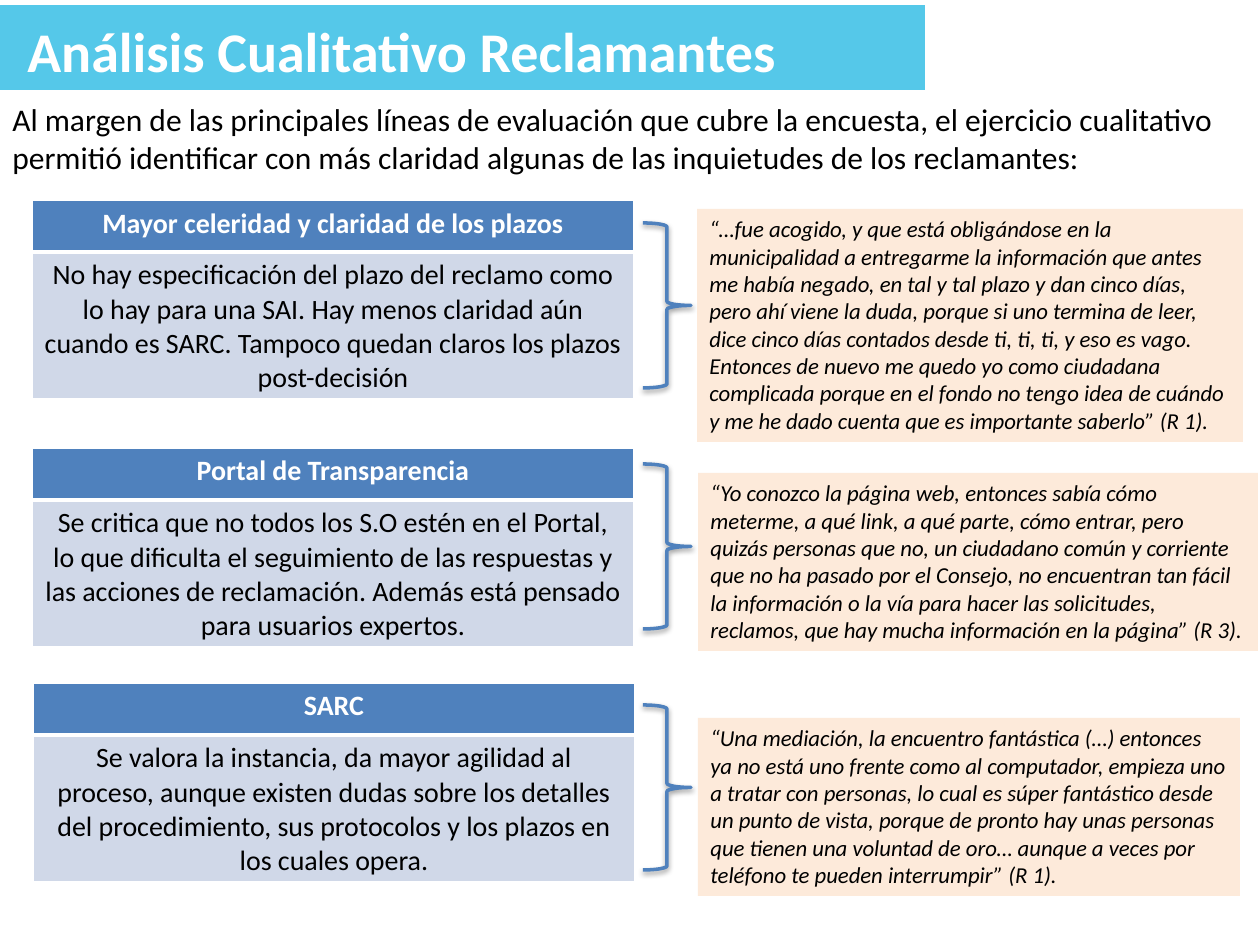
"""Build the slide on the qualitative analysis of claimants."""
from pptx import Presentation
from pptx.dml.color import RGBColor
from pptx.enum.shapes import MSO_SHAPE
from pptx.enum.text import MSO_ANCHOR, MSO_AUTO_SIZE, PP_ALIGN
from pptx.oxml import parse_xml
from pptx.oxml.ns import nsdecls
from pptx.util import Pt

RECT = MSO_SHAPE.RECTANGLE
BRACE = MSO_SHAPE.RIGHT_BRACE
TOP = MSO_ANCHOR.TOP
GROW = MSO_AUTO_SIZE.SHAPE_TO_FIT_TEXT
LEFT = PP_ALIGN.LEFT
CENTER = PP_ALIGN.CENTER

WHITE = RGBColor(0xFF, 0xFF, 0xFF)
BLACK = RGBColor(0x00, 0x00, 0x00)
CYAN = RGBColor(0x55, 0xC8, 0xE9)
BLUE = RGBColor(0x4F, 0x81, 0xBD)
PALE = RGBColor(0xD0, 0xD8, 0xE8)
PEACH = RGBColor(0xFD, 0xEA, 0xDA)

SCALE = 914400 / 126
FONT = "Calibri"
SHADOW = (
    f'<a:effectLst {nsdecls("a")}><a:outerShdw blurRad="40000" dist="20000" '
    'dir="5400000" rotWithShape="0"><a:srgbClr val="000000">'
    '<a:alpha val="38000"/></a:srgbClr></a:outerShdw></a:effectLst>'
)

TITLE = "Análisis Cualitativo Reclamantes"
INTRO = (
    "Al margen de las principales líneas de evaluación que cubre la encuesta, "
    "el ejercicio cualitativo permitió identificar con más claridad algunas de "
    "las inquietudes de los reclamantes:"
)
TOPICS = [
    (
        (32, 200), "Mayor celeridad y claridad de los plazos",
        "No hay especificación del plazo del reclamo como lo hay para una SAI. "
        "Hay menos claridad aún cuando es SARC. Tampoco quedan claros los plazos "
        "post-decisión",
        (697, 209, 546, 233),
        "“…fue acogido, y que está obligándose en la municipalidad a entregarme "
        "la información que antes me había negado, en tal y tal plazo y dan cinco "
        "días, pero ahí viene la duda, porque si uno termina de leer, dice cinco "
        "días contados desde ti, ti, ti, y eso es vago. Entonces de nuevo me quedo "
        "yo como ciudadana complicada porque en el fondo no tengo idea de cuándo y "
        "me he dado cuenta que es importante saberlo” (R 1).",
    ),
    (
        (32, 448), "Portal de Transparencia",
        "Se critica que no todos los S.O estén en el Portal, lo que dificulta el "
        "seguimiento de las respuestas y las acciones de reclamación. Además está "
        "pensado para usuarios expertos.",
        (698, 473, 560, 178),
        "“Yo conozco la página web, entonces sabía cómo meterme, a qué link, a qué "
        "parte, cómo entrar, pero quizás personas que no, un ciudadano común y "
        "corriente que no ha pasado por el Consejo, no encuentran tan fácil la "
        "información o la vía para hacer las solicitudes, reclamos, que hay mucha "
        "información en la página” (R 3).",
    ),
    (
        (33, 683), "SARC",
        "Se valora la instancia, da mayor agilidad al proceso, aunque existen "
        "dudas sobre los detalles del procedimiento, sus protocolos y los plazos "
        "en los cuales opera.",
        (698, 718, 542, 178),
        "“Una mediación, la encuentro fantástica (…) entonces ya no está uno "
        "frente como al computador, empieza uno a tratar con personas, lo cual es "
        "súper fantástico desde un punto de vista, porque de pronto hay unas "
        "personas que tienen una voluntad de oro… aunque a veces por teléfono te "
        "pueden interrumpir” (R 1).",
    ),
]


def emu(*nums):
    """Turn px lengths into EMU."""
    return [round(n * SCALE) for n in nums]


class Sheet:
    """Hold the style and the current slide."""

    def __init__(self, deck):
        self.slide = deck.slides.add_slide(deck.slide_layouts[6])
        self.shapes = self.slide.shapes

    def put(self, frame, text, size, color=BLACK, bold=False, slant=False,
            align=LEFT):
        """Fill a frame with one styled paragraph."""
        para = frame.paragraphs[0]
        para.text = text
        para.alignment = align
        font = para.font
        font.name, font.size = FONT, Pt(size)
        font.bold, font.italic = bold, slant
        font.color.rgb = color

    def label(self, box, text, size, wrap=True, **style):
        """Add a text box."""
        frame = self.shapes.add_textbox(*emu(*box)).text_frame
        frame.word_wrap = wrap
        frame.auto_size = GROW
        self.put(frame, text, size, **style)

    def block(self, box, fill):
        """Add a plain filled rectangle."""
        shape = self.shapes.add_shape(RECT, *emu(*box))
        shape.shadow.inherit = False
        shape.fill.solid()
        shape.fill.fore_color.rgb = fill
        shape.line.fill.background()
        return shape

    def quote(self, box, text):
        """Add a filled box with a quotation."""
        frame = self.block(box, PEACH).text_frame
        frame.word_wrap = True
        frame.auto_size = GROW
        frame.vertical_anchor = TOP
        self.put(frame, text, 13, slant=True)

    def brace(self, box):
        """Add a right brace with a soft shadow."""
        shape = self.shapes.add_shape(BRACE, *emu(*box))
        shape.fill.background()
        shape.line.color.rgb = BLUE
        shape.line.width = Pt(2)
        shape._element.spPr.append(parse_xml(SHADOW))

    def edge(self, cell, low):
        """Draw white borders round a cell, the lower one low points wide."""
        props = cell._tc.get_or_add_tcPr()
        for spot, (side, width) in enumerate(zip("LRTB", (1, 1, 1, low))):
            props.insert(spot, parse_xml(
                f'<a:ln{side} {nsdecls("a")} w="{Pt(width)}"><a:solidFill>'
                f'<a:srgbClr val="{WHITE}"/></a:solidFill></a:ln{side}>'))

    def table(self, spot, head, body):
        """Add a two-row table with a heading and a body."""
        grid = self.shapes.add_table(2, 1, *emu(*spot, 602, 198)).table
        rows = [(head, 52, BLUE, WHITE, True, 3), (body, 146, PALE, BLACK, False, 1)]
        for num, (text, high, fill, color, bold, low) in enumerate(rows):
            grid.rows[num].height = emu(high)[0]
            cell = grid.cell(num, 0)
            cell.fill.solid()
            cell.fill.fore_color.rgb = fill
            self.edge(cell, low)
            self.put(cell.text_frame, text, 16, color, bold, align=CENTER)


def main():
    """Build and save the slide."""
    deck = Presentation()
    deck.slide_width, deck.slide_height = emu(1260, 945)
    sheet = Sheet(deck)
    sheet.block((0, 5, 925, 85), CYAN)
    sheet.label((15, 10, 781, 81), TITLE, 32, wrap=False, color=WHITE, bold=True)
    sheet.label((0, 94, 1260, 89), INTRO, 18)
    for num, (spot, head, body, box, text) in enumerate(TOPICS):
        sheet.table(spot, head, body)
        sheet.brace((643, 223 + 241 * num, 48, 165))
        sheet.quote(box, text)
    deck.save("out.pptx")


if __name__ == "__main__":
    main()
